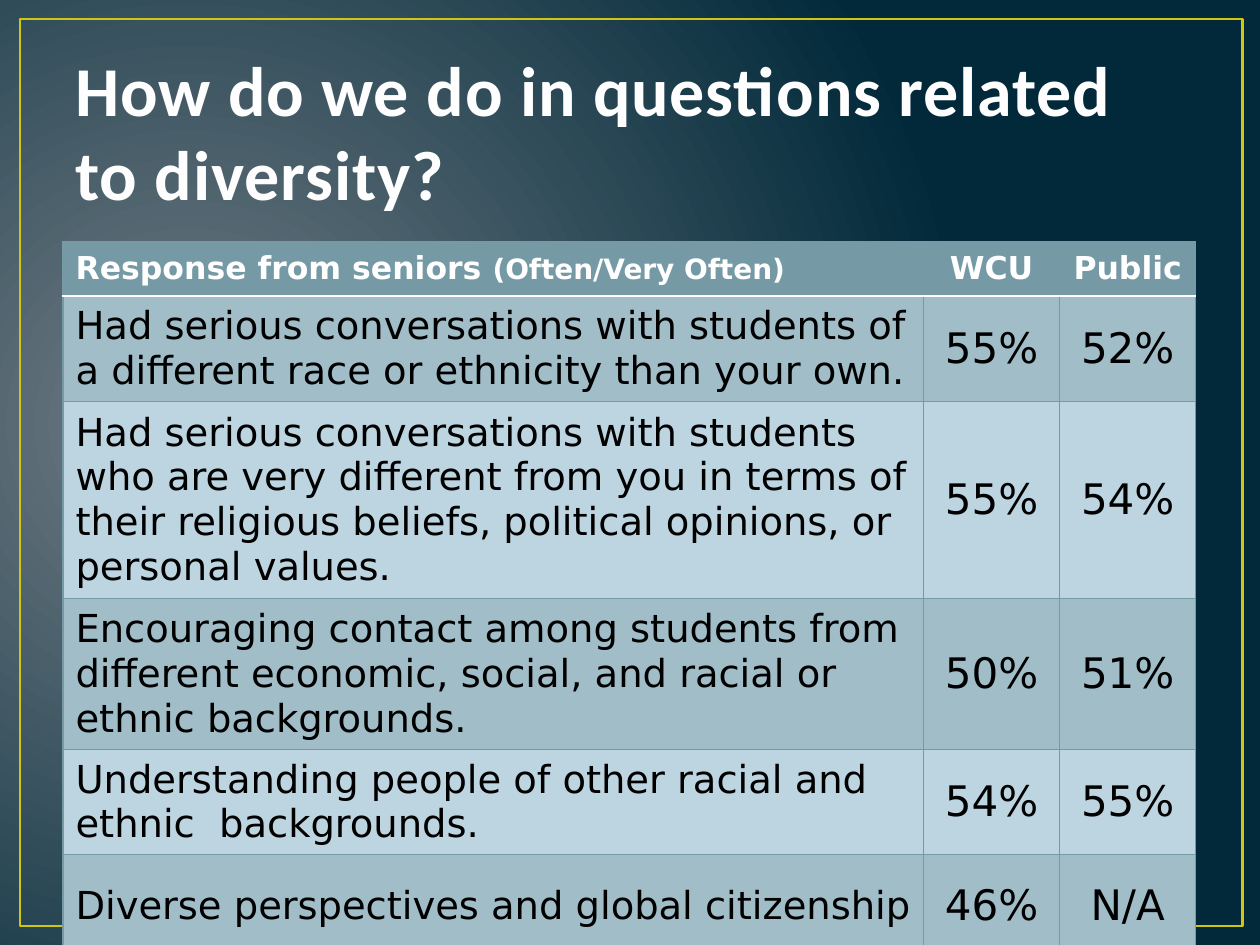
from lxml.etree import SubElement
from pptx import Presentation
from pptx.dml.color import RGBColor
from pptx.enum.shapes import MSO_SHAPE
from pptx.enum.text import MSO_ANCHOR, PP_ALIGN
from pptx.oxml import parse_xml
from pptx.oxml.ns import nsdecls, qn
from pptx.util import Inches, Pt

TEAL, BAND, LIGHT = "759AA5", "A0BDC8", "BDD5E0"
WHITE, BLACK = "FFFFFF", "000000"
COLUMN_WIDTHS = [6.83, 1.08, 1.08]
ROW_HEIGHTS = [0.43, 0.81, 1.16, 0.81, 0.81, 0.81]
HEADER = ["Response from seniors ", "WCU", "Public"]
RESPONSES = [
    ["Had serious conversations with students of a different race or ethnicity "
     "than your own.", "55%", "52%"],
    ["Had serious conversations with students who are very different from you in "
     "terms of their religious beliefs, political opinions, or personal values.",
     "55%", "54%"],
    ["Encouraging contact among students from different economic, social, and "
     "racial or ethnic backgrounds.", "50%", "51%"],
    ["Understanding people of other racial and ethnic  backgrounds.", "54%", "55%"],
    ["Diverse perspectives and global citizenship", "46%", "N/A"],
]


def color(value):
    return RGBColor.from_string(value)


def set_font(font, name, size, value, bold):
    font.name, font.size, font.bold = name, Pt(size), bold
    font.color.rgb = color(value)


def line_xml(tag, value, width):
    return parse_xml(
        f'<a:{tag} {nsdecls("a")} w="{Pt(width)}"><a:solidFill>'
        f'<a:srgbClr val="{value}"/></a:solidFill></a:{tag}>')


def set_background(slide):
    """Radial gradient centred left of the middle."""
    fill = slide.background.fill
    fill.gradient()
    for stop, position, value in zip(fill.gradient_stops, (0, 1), ("717C84", "01293A")):
        stop.position = position
        stop.color.rgb = color(value)
    gradient = slide.element.find(".//" + qn("a:gradFill"))
    gradient.remove(gradient.find(qn("a:lin")))
    path = SubElement(gradient, qn("a:path"), {"path": "circle"})
    SubElement(path, qn("a:fillToRect"),
               {"l": "15000", "t": "50000", "r": "85000", "b": "60000"})


def add_frame(slide):
    frame = slide.shapes.add_shape(
        MSO_SHAPE.RECTANGLE, Inches(0.16), Inches(0.15), Inches(9.7), Inches(7.2))
    frame.shadow.inherit = False
    frame.fill.background()
    frame.line.color.rgb = color("CFC60D")
    frame.line.width = Pt(1.5)


def add_title(slide, text):
    box = slide.shapes.add_textbox(Inches(0.5), Inches(0.3), Inches(9), Inches(1.45))
    box.text_frame.word_wrap = True
    box.text_frame.vertical_anchor = MSO_ANCHOR.BOTTOM
    run = box.text_frame.paragraphs[0].add_run()
    run.text = text
    set_font(run.font, "Calibri", 40, "FEFEFE", True)
    properties = run._r.get_or_add_rPr()
    properties.set("spc", "50")
    properties.insert(0, line_xml("ln", "384F55", 1.05))


def set_borders(cell, top, bottom):
    """Teal sides; top and bottom are (colour, width) pairs."""
    side = (TEAL, 0.75)
    borders = zip(("lnL", "lnR", "lnT", "lnB"), (side, side, top, bottom))
    properties = cell._tc.get_or_add_tcPr()
    for index, (tag, border) in enumerate(borders):
        properties.insert(index, line_xml(tag, *border))


def fill_cell(cell, text, size, text_color, fill, bold, centered):
    cell.text = text
    cell.vertical_anchor = MSO_ANCHOR.MIDDLE
    cell.fill.solid()
    cell.fill.fore_color.rgb = color(fill)
    paragraph = cell.text_frame.paragraphs[0]
    paragraph.alignment = PP_ALIGN.CENTER if centered else PP_ALIGN.LEFT
    set_font(paragraph.font, "DejaVu Sans", size, text_color, bold)


def add_response_table(slide):
    table = slide.shapes.add_table(
        len(ROW_HEIGHTS), len(COLUMN_WIDTHS), Inches(0.5), Inches(1.92),
        Inches(sum(COLUMN_WIDTHS)), Inches(sum(ROW_HEIGHTS))).table
    for column, width in zip(table.columns, COLUMN_WIDTHS):
        column.width = Inches(width)
    for row, height in zip(table.rows, ROW_HEIGHTS):
        row.height = Inches(height)

    thin, header_rule = (TEAL, 0.75), (WHITE, 1.25)
    for row_index, texts in enumerate([HEADER] + RESPONSES):
        for column_index, text in enumerate(texts):
            cell = table.cell(row_index, column_index)
            centered = column_index > 0
            if row_index == 0:
                fill_cell(cell, text, 18, WHITE, TEAL, True, centered)
            else:
                fill_cell(cell, text, 24 if centered else 22, BLACK,
                          BAND if row_index % 2 else LIGHT, False, centered)
            set_borders(cell, header_rule if row_index == 1 else thin,
                        header_rule if row_index == 0 else thin)

    scale = table.cell(0, 0).text_frame.paragraphs[0].add_run()
    scale.text = "(Often/Very Often)"
    scale.font.size = Pt(16)


def main():
    presentation = Presentation()
    presentation.slide_width, presentation.slide_height = Inches(10), Inches(7.5)
    slide = presentation.slides.add_slide(presentation.slide_layouts[6])
    set_background(slide)
    add_frame(slide)
    add_title(slide, "How do we do in questions related to diversity?")
    add_response_table(slide)
    presentation.save("out.pptx")


if __name__ == "__main__":
    main()
